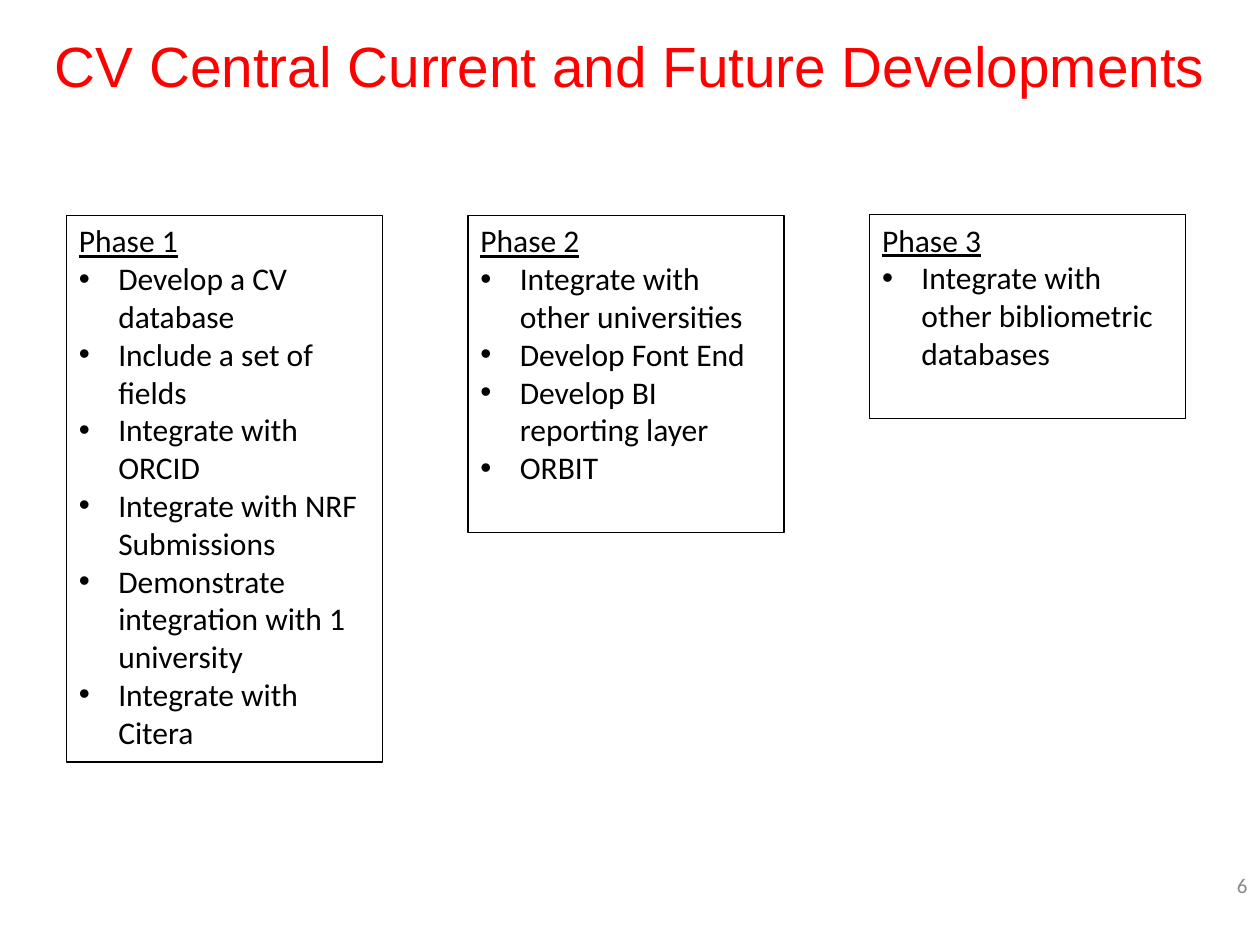
"""Build the slide on current and future phases of CV Central."""
from lxml import etree
from pptx import Presentation
from pptx.dml.color import RGBColor
from pptx.enum.text import MSO_ANCHOR, PP_ALIGN
from pptx.oxml.ns import qn
from pptx.util import Pt

TOP, MID = MSO_ANCHOR.TOP, MSO_ANCHOR.MIDDLE
LEFT, CENTER, RIGHT = PP_ALIGN.LEFT, PP_ALIGN.CENTER, PP_ALIGN.RIGHT
COLORS = {"title": "FF0000", "text": "000000", "number": "898989"}
INDENT = Pt(22.5)


def add_text(lines, left, top, width, height, size=18, face="Calibri",
             color="text", align=LEFT, anchor=TOP, space=1, head=False):
    box = slide.shapes.add_textbox(Pt(left), Pt(top), Pt(width), Pt(height))
    frame = box.text_frame
    frame.word_wrap = True
    frame.vertical_anchor = anchor
    frame.text = "\n".join(lines)
    for row, para in enumerate(frame.paragraphs):
        para.alignment = align
        para.line_spacing = space
        if head and row:
            props = para._p.get_or_add_pPr()
            props.set("marL", str(INDENT))
            props.set("indent", str(-INDENT))
            etree.SubElement(props, qn("a:buFont"), typeface="Arial")
            etree.SubElement(props, qn("a:buChar"), char="•")
        font = para.runs[0].font
        font.name = face
        font.size = Pt(size)
        font.color.rgb = RGBColor.from_string(COLORS[color])
        font.underline = head and row == 0
    return box


deck = Presentation()
deck.slide_width, deck.slide_height = Pt(720), Pt(540)
slide = deck.slides.add_slide(deck.slide_layouts[6])

add_text(["CV Central Current and Future Developments"], 0, 13, 720, 52.5,
         size=32.4, face="Arial", color="title", align=CENTER, anchor=MID,
         space=0.9)
add_text(["6"], 558, 491, 162, 29, size=12, color="number", align=RIGHT,
         anchor=MID)

phases = [
    (123, 312.5, ["Develop a CV database", "Include a set of fields",
                  "Integrate with ORCID", "Integrate with NRF Submissions",
                  "Demonstrate integration with 1 university",
                  "Integrate with Citera"]),
    (123, 181.5, ["Integrate with other universities", "Develop Font End",
                  "Develop BI reporting layer", "ORBIT"]),
    (122.5, 116.5, ["Integrate with other bibliometric databases"]),
]
for col, (top, height, tasks) in enumerate(phases):
    box = add_text([f"Phase {col + 1}"] + tasks, 38 + 229.5 * col, top,
                   180.5, height, head=True)
    box.line.color.rgb = RGBColor.from_string(COLORS["text"])
    box.line.width = Pt(0.75)

deck.save("out.pptx")
